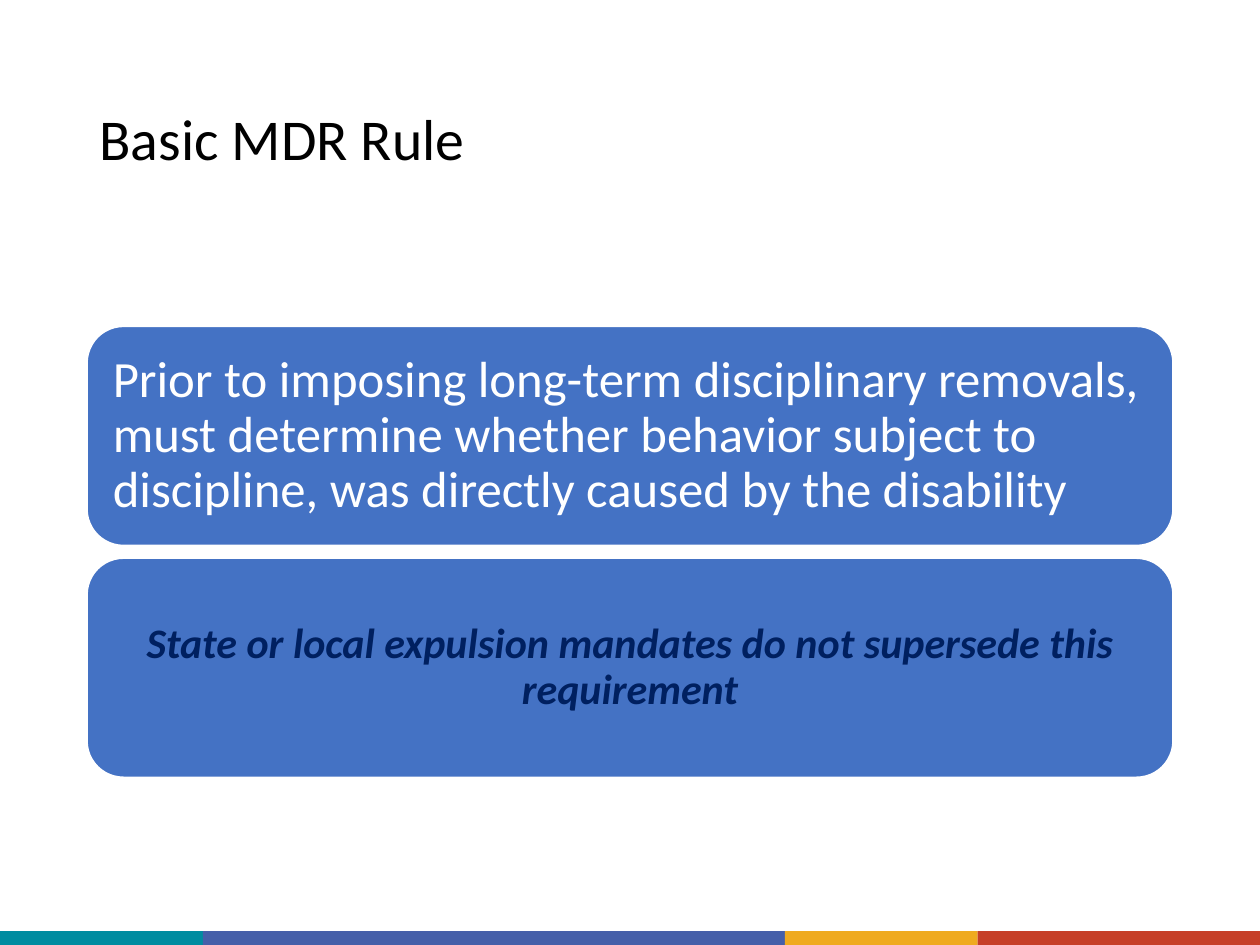
"""Build the Basic MDR Rule slide with two statement cards and a colour strip."""
from pptx import Presentation
from pptx.dml.color import RGBColor
from pptx.enum.shapes import MSO_SHAPE
from pptx.enum.text import MSO_ANCHOR, MSO_AUTO_SIZE, PP_ALIGN
from pptx.util import Inches, Pt

RECTANGLE, ROUNDED = MSO_SHAPE.RECTANGLE, MSO_SHAPE.ROUNDED_RECTANGLE
LEFT, CENTER = PP_ALIGN.LEFT, PP_ALIGN.CENTER
MIDDLE = MSO_ANCHOR.MIDDLE
NO_AUTOFIT = MSO_AUTO_SIZE.NONE


def add_block(kind, left, top, width, height, fill):
    shape = slide.shapes.add_shape(
        kind, Inches(left), Inches(top), Inches(width), Inches(height))
    shape.shadow.inherit = False
    shape.fill.solid()
    shape.fill.fore_color.rgb = RGBColor.from_string(fill)
    shape.line.fill.background()
    return shape


def write_text(shape, text, size, color, align=LEFT, inset=0.1, strong=False):
    frame = shape.text_frame
    frame.word_wrap = True
    frame.auto_size = NO_AUTOFIT
    frame.vertical_anchor = MIDDLE
    frame.margin_left = frame.margin_right = Inches(inset)
    frame.margin_top = frame.margin_bottom = Inches(inset)
    paragraph = frame.paragraphs[0]
    paragraph.alignment = align
    paragraph.line_spacing = 0.9
    run = paragraph.add_run()
    run.text = text
    run.font.name = "Calibri"
    run.font.size = Pt(size)
    run.font.bold = run.font.italic = strong
    run.font.color.rgb = RGBColor.from_string(color)


WIDTH, HEIGHT = 10, 7.5
MARGIN = 0.69
CONTENT_WIDTH = WIDTH - 2 * MARGIN
STRIP_HEIGHT = 0.11
CARD_TOP, CARD_HEIGHT, CARD_GAP = 2.59, 1.74, 0.1

presentation = Presentation()
presentation.slide_width, presentation.slide_height = Inches(WIDTH), Inches(HEIGHT)
slide = presentation.slides.add_slide(presentation.slide_layouts[5])

strip = [(1.61, "008CA0"), (4.62, "455FA9"), (1.53, "EFAA1F"), (2.24, "C63F28")]
left = 0
for width, color in strip:
    add_block(RECTANGLE, left, HEIGHT - STRIP_HEIGHT, width, STRIP_HEIGHT, color)
    left += width

title = slide.shapes.title
title.left, title.top = Inches(MARGIN), Inches(0.4)
title.width, title.height = Inches(CONTENT_WIDTH), Inches(1.45)
write_text(title, "Basic MDR Rule", size=33, color="000000")

cards = [
    ("Prior to imposing long-term disciplinary removals, must determine whether "
     "behavior subject to discipline, was directly caused by the disability",
     dict(size=29, color="FFFFFF", inset=0.12)),
    ("State or local expulsion mandates do not supersede this requirement",
     dict(size=24, color="002060", align=CENTER, strong=True)),
]
for row, (text, text_format) in enumerate(cards):
    top = CARD_TOP + row * (CARD_HEIGHT + CARD_GAP)
    card = add_block(ROUNDED, MARGIN, top, CONTENT_WIDTH, CARD_HEIGHT, "4472C4")
    card.line.color.rgb = RGBColor.from_string("FFFFFF")
    card.line.width = Pt(1)
    write_text(card, text, **text_format)

presentation.save("out.pptx")
